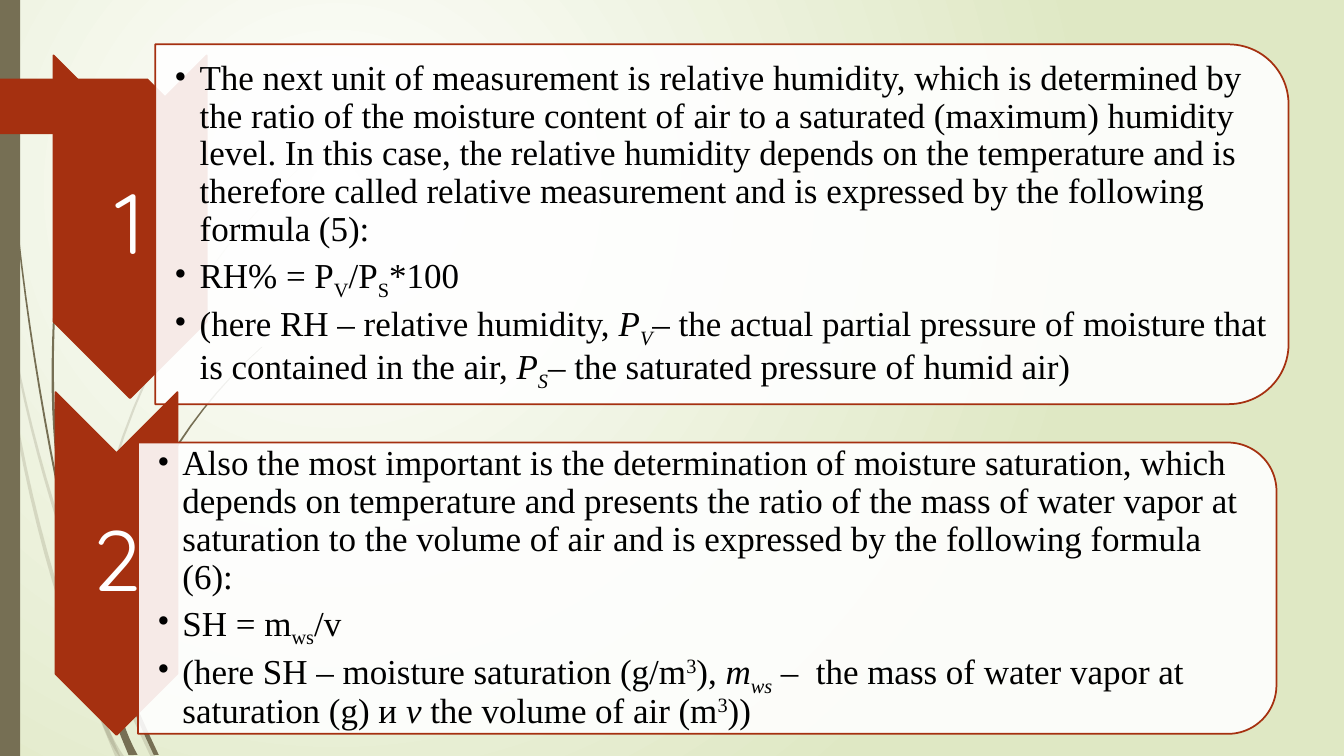
"""Build the slide on relative humidity and moisture saturation."""
from collections import namedtuple
from lxml import etree
from pptx import Presentation
from pptx.dml.color import RGBColor
from pptx.enum.shapes import MSO_SHAPE as Preset
from pptx.enum.text import MSO_ANCHOR as Anchor, PP_ALIGN as Align
from pptx.oxml import parse_xml
from pptx.oxml.ns import nsdecls, qn
from pptx.util import Inches, Pt

Run = namedtuple("Run", "words baseline italic", defaults=(0, False))
Stem = namedtuple("Stem", "start through end tip base")
Step = namedtuple("Step", "number chevron panel body")

SUB, SUPER = -25000, 30000
CORNER_RATIO = 1 / 6
CORNER_INSET = .29

PALE_STEMS = [
    Stem((0, 2.9), (.38, 5.2), (1.17, 7.51), .02, .05),
    Stem((.15, 3.5), (.68, 5.48), (1.52, 7.51), .02, .05),
    Stem((3.12, 1.53), (1.59, 3.48), (.86, 5.9), .01, .03),
    Stem((.86, 5.9), (.94, 6.85), (1.21, 7.51), .03, .05),
]
DARK_STEMS = [
    Stem((.03, 0), (.18, 2.33), (.56, 4.77), .01, .02),
    Stem((.56, 4.77), (.83, 6.15), (1.3, 7.49), .02, .05),
    Stem((.7, 1.41), (.53, 3.3), (.59, 4.72), .01, .03),
    Stem((.59, 4.72), (.98, 6.1), (1.55, 7.49), .03, .05),
    Stem((2.6, 3.44), (1.57, 4.75), (1.08, 6.35), .01, .04),
    Stem((1.08, 6.35), (1.15, 6.98), (1.34, 7.49), .04, .05),
]

HUMIDITY = [
    [Run("The next unit of measurement is relative humidity, which is determined by the ratio of the "
         "moisture content of air to a saturated (maximum) humidity level. In this case, the relative "
         "humidity depends on the temperature and is therefore called relative measurement and is "
         "expressed by the following formula (5):")],
    [Run("RH% = P"), Run("V", SUB), Run("/P"), Run("S", SUB), Run("*100")],
    [Run("(here RH – relative humidity, "), Run("P", italic=True), Run("V", SUB, True),
     Run("– the actual partial pressure of moisture that is contained in the air, "),
     Run("P", italic=True), Run("S", SUB, True), Run("– the saturated pressure of humid air)")],
]
SATURATION = [
    [Run("Also the most important is the determination of moisture saturation, which depends on "
         "temperature and presents the ratio of the mass of water vapor at saturation to the volume "
         "of air and is expressed by the following formula (6):")],
    [Run("SH = m"), Run("ws", SUB), Run("/v")],
    [Run("(here SH – moisture saturation (g/m"), Run("3", SUPER), Run("), "),
     Run("m", italic=True), Run("ws", SUB, True),
     Run(" –  the mass of water vapor at saturation (g) и "), Run("v ", italic=True),
     Run("the volume of air (m"), Run("3", SUPER), Run("))")],
]
STEPS = [
    Step("1", (.53, .55, 1.52, 3.4), (1.54, .44, 11.24, 3.57), HUMIDITY),
    Step("2", (.55, 3.89, 1.21, 3.4), (1.37, 4.39, 11.29, 2.89), SATURATION),
]


def color(value):
    """Turn a hex string into a colour."""
    return RGBColor.from_string(value)


def curve_point(stem, t):
    """Return the point at t on the quadratic curve that passes the stem's middle point."""
    return tuple(
        (1 - t) ** 2 * start + 2 * t * (1 - t) * (2 * middle - (start + end) / 2) + t ** 2 * end
        for start, middle, end in zip(stem.start, stem.through, stem.end))


class HumiditySlide:
    """Hold the slide and its style."""
    olive, rust, white, black, meadow = "766F54", "A53010", "FFFFFF", "000000", "DFE8C4"
    body_font, number_font = "Times New Roman", "Quicksand"
    body_size, number_size = 25, 61

    def __init__(self, slide):
        """Keep the slide to draw on."""
        self.slide = slide

    def background(self):
        """Fill the background with a radial gradient."""
        fill = self.slide.background.fill
        fill.gradient()
        for stop, shade in zip(fill.gradient_stops, (self.white, self.meadow)):
            stop.color.rgb = color(shade)
        gradient = self.slide.element.xpath(".//p:bg//a:gradFill")[0]
        for linear in gradient.findall(qn("a:lin")):
            gradient.remove(linear)
        gradient.append(parse_xml(
            f'<a:path {nsdecls("a")} path="circle">'
            '<a:fillToRect l="50000" t="50000" r="100000" b="100000"/></a:path>'))

    def paint(self, shape, fill, opacity=100, line=None):
        """Set the fill, opacity and outline of a shape."""
        shape.shadow.inherit = False
        shape.fill.solid()
        shape.fill.fore_color.rgb = color(fill)
        if opacity < 100:
            shade = shape.element.spPr.find(qn("a:solidFill"))[0]
            etree.SubElement(shade, qn("a:alpha"), val=str(opacity * 1000))
        if line:
            shape.line.color.rgb = color(line)
            shape.line.width = Pt(1.25)
        else:
            shape.line.fill.background()

    def stem(self, stem, opacity=100, pieces=16):
        """Draw a curved grass stem that widens from tip to base."""
        left_edge, right_edge = [], []
        for piece in range(pieces + 1):
            t = piece / pieces
            x, y = curve_point(stem, t)
            half = (stem.tip + (stem.base - stem.tip) * t) / 2
            left_edge.append((Inches(x - half), Inches(y)))
            right_edge.append((Inches(x + half), Inches(y)))
        first, *rest = left_edge + right_edge[::-1]
        builder = self.slide.shapes.build_freeform(*first)
        builder.add_line_segments(rest)
        self.paint(builder.convert_to_shape(), self.olive, opacity)

    def preset(self, kind, box, fill, **style):
        """Draw a preset shape that covers the box."""
        shape = self.slide.shapes.add_shape(kind, *map(Inches, box))
        self.paint(shape, fill, **style)
        return shape

    def turned_preset(self, kind, box, fill, **style):
        """Draw a preset shape turned by a quarter so that it covers the box."""
        left, top, width, height = box
        shift = (width - height) / 2
        shape = self.preset(kind, (left + shift, top - shift, height, width), fill, **style)
        shape.rotation = 90

    def text(self, paragraphs, box, font, size, ink, align=Align.LEFT, inset=(.04,) * 4, after=0, bullet=None):
        """Write paragraphs made of runs in a box."""
        frame = self.slide.shapes.add_textbox(*map(Inches, box)).text_frame
        frame.word_wrap = True
        frame.vertical_anchor = Anchor.MIDDLE
        frame.margin_left, frame.margin_top, frame.margin_right, frame.margin_bottom = map(Inches, inset)
        for index, runs in enumerate(paragraphs):
            paragraph = frame.add_paragraph() if index else frame.paragraphs[0]
            paragraph.alignment, paragraph.line_spacing = align, .9
            paragraph.space_after = Pt(after)
            if bullet:
                properties = paragraph._p.get_or_add_pPr()
                properties.set("marL", str(Inches(.25)))
                properties.set("indent", str(-Inches(.25)))
                etree.SubElement(properties, qn("a:buFont"), typeface=font)
                etree.SubElement(properties, qn("a:buChar"), char=bullet)
            for words, baseline, italic in runs:
                run = paragraph.add_run()
                run.text = words
                run.font.name, run.font.size, run.font.italic = font, Pt(size), italic
                run.font.color.rgb = color(ink)
                if baseline:
                    run.font._element.set("baseline", str(baseline))

    def number_arrow(self, number, box):
        """Draw a downward chevron with its number between the two notches."""
        left, top, width, height = box
        self.turned_preset(Preset.CHEVRON, box, self.rust, line=self.rust)
        self.text([[Run(number)]], (left, top + width / 2, width, height - width), self.number_font,
                  self.number_size, self.white, align=Align.CENTER, after=.35 * self.number_size)

    def panel(self, body, box):
        """Draw a panel rounded on the right, with its text clear of the corners."""
        left, top, width, height = box
        gap = CORNER_INSET * CORNER_RATIO * height
        self.turned_preset(Preset.ROUND_2_SAME_RECTANGLE, box, self.white, opacity=90, line=self.rust)
        self.text(body, (left, top + gap, width - gap, height - 2 * gap), self.body_font, self.body_size,
                  self.black, inset=(.19, .02, .02, .02), after=.15 * self.body_size, bullet="•")


def main():
    """Build and save the presentation."""
    deck = Presentation()
    deck.slide_width, deck.slide_height = Inches(13.33), Inches(7.5)
    page = HumiditySlide(deck.slides.add_slide(deck.slide_layouts[6]))
    page.background()
    for stems, opacity in ((PALE_STEMS, 20), (DARK_STEMS, 100)):
        for stem in stems:
            page.stem(stem, opacity)
    page.preset(Preset.RECTANGLE, (0, 0, .2, 7.5), page.olive)
    page.preset(Preset.PENTAGON, (0, .78, 1.74, .55), page.rust)
    for step in STEPS:
        page.number_arrow(step.number, step.chevron)
        page.panel(step.body, step.panel)
    deck.save("out.pptx")


if __name__ == "__main__":
    main()
